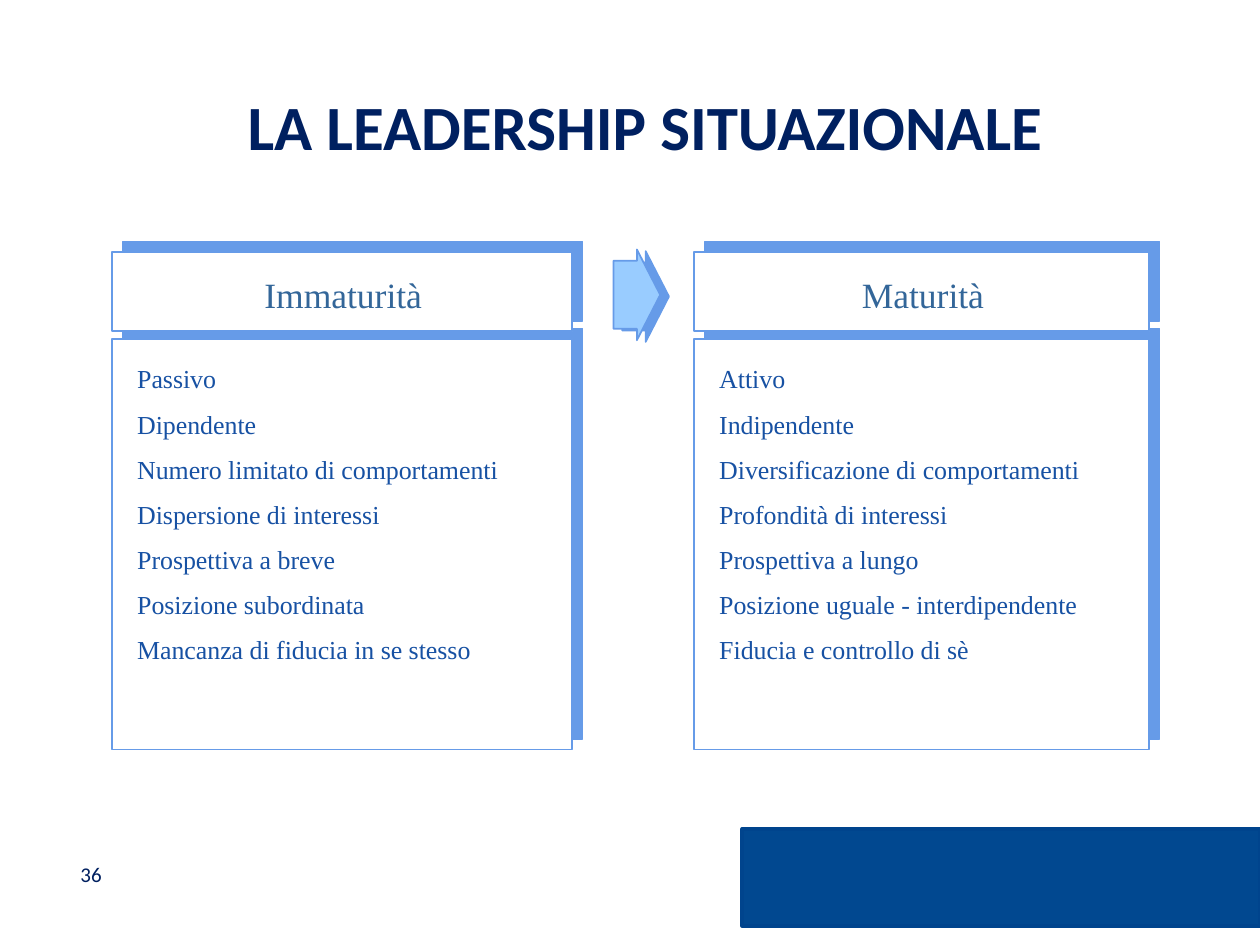
import pptx
import pptx.util
import pptx.dml.color
import pptx.enum.shapes
import pptx.enum.text
import pptx.oxml
import pptx.oxml.ns

Inches = pptx.util.Inches
Pt = pptx.util.Pt
RGBColor = pptx.dml.color.RGBColor
Shape = pptx.enum.shapes.MSO_SHAPE
Align = pptx.enum.text.PP_ALIGN
Anchor = pptx.enum.text.MSO_ANCHOR

NAVY = RGBColor(0x00, 0x20, 0x60)
BAND = RGBColor(0x01, 0x48, 0x90)
EDGE = RGBColor(0x00, 0x44, 0x8D)
SKY = RGBColor(0x66, 0x9B, 0xE8)
PALE = RGBColor(0x99, 0xCC, 0xFF)
STEEL = RGBColor(0x33, 0x66, 0x99)
BLUE = RGBColor(0x17, 0x51, 0xA3)
WHITE = RGBColor(0xFF, 0xFF, 0xFF)

COLUMNS = [
    (0.89, 3.65, "Immaturità", [
        "Passivo", "Dipendente", "Numero limitato di comportamenti",
        "Dispersione di interessi", "Prospettiva a breve",
        "Posizione subordinata", "Mancanza di fiducia in se stesso"]),
    (5.51, 3.61, "Maturità", [
        "Attivo", "Indipendente", "Diversificazione di comportamenti",
        "Profondità di interessi", "Prospettiva a lungo",
        "Posizione uguale - interdipendente", "Fiducia e controllo di sè"]),
]


class Deck:
    sans = "Calibri"
    serif = "Times New Roman"
    pitch = Pt(12.9)

    def __init__(self):
        self.prs = pptx.Presentation()
        self.prs.slide_width = Inches(10)
        self.prs.slide_height = Inches(7.5)
        self.slide = self.prs.slides.add_slide(self.prs.slide_layouts[5])

    def style(self, para, face, size, color, bold=False):
        for run in para.runs:
            run.font.name = face
            run.font.size = Pt(size)
            run.font.color.rgb = color
            run.font.bold = bold

    def title(self, text, *box):
        holder = self.slide.shapes.title
        holder.left, holder.top, holder.width, holder.height = map(Inches, box)
        frame = holder.text_frame
        frame.text = text
        frame.vertical_anchor = Anchor.MIDDLE
        frame.auto_size = pptx.enum.text.MSO_AUTO_SIZE.NONE
        frame.paragraphs[0].alignment = Align.CENTER
        self.style(frame.paragraphs[0], self.sans, 36, NAVY, True)

    def shape(self, kind, box, fill, line, width=1):
        item = self.slide.shapes.add_shape(kind, *map(Inches, box))
        item.shadow.inherit = False
        item.fill.solid()
        item.fill.fore_color.rgb = fill
        item.line.color.rgb = line
        item.line.width = Pt(width)
        return item

    def shade(self, item, dist, angle):
        """Add a hard-edged shadow, dist in points and angle in degrees."""
        effects = item.element.spPr.find(pptx.oxml.ns.qn("a:effectLst"))
        effects.append(pptx.oxml.parse_xml(
            f'<a:outerShdw {pptx.oxml.ns.nsdecls("a")} blurRad="0" '
            f'dist="{int(Pt(dist))}" dir="{angle * 60000}" algn="ctr" '
            f'rotWithShape="0"><a:srgbClr val="{SKY}"/></a:outerShdw>'))

    def panel(self, *box):
        self.shade(self.shape(Shape.RECTANGLE, box, WHITE, SKY), 8.5, 315)

    def arrow(self, *box):
        item = self.shape(Shape.RIGHT_ARROW, box, PALE, SKY)
        item.adjustments[0] = 0.75
        item.adjustments[1] = 0.5
        self.shade(item, 5.1, 11)

    def text(self, text, box, face, size, color, align=Align.LEFT):
        frame = self.slide.shapes.add_textbox(*map(Inches, box)).text_frame
        frame.word_wrap = True
        frame.text = text
        for para in frame.paragraphs:
            para.alignment = align
            self.style(para, face, size, color)
        return frame

    def items(self, lines, box):
        frame = self.text("\n".join(lines), box, self.serif, 14.8, BLUE)
        for i, para in enumerate(frame.paragraphs):
            para.line_spacing = self.pitch
            if i:
                para.space_before = self.pitch

    def column(self, left, width, head, lines):
        self.panel(left, 2.69, width, 3.26)
        self.panel(left, 2, width, 0.63)
        self.text(head, (left + 0.02, 2.12, width - 0.02, 0.44),
                  self.serif, 20.3, STEEL, Align.CENTER)
        self.items(lines, (left + 0.1, 2.9, width - 0.16, 2.47))


def main():
    deck = Deck()
    deck.shape(Shape.RECTANGLE, (5.89, 6.58, 4.11, 0.77), BAND, EDGE, 2)
    number = deck.text("36", (0.54, 6.74, 2.33, 0.4), deck.sans, 12, NAVY)
    number.vertical_anchor = Anchor.MIDDLE
    for column in COLUMNS:
        deck.column(*column)
    deck.arrow(4.87, 1.98, 0.37, 0.72)
    deck.title("LA LEADERSHIP SITUAZIONALE", 0.98, 0.6, 8.28, 0.79)
    deck.prs.save("out.pptx")


if __name__ == "__main__":
    main()
